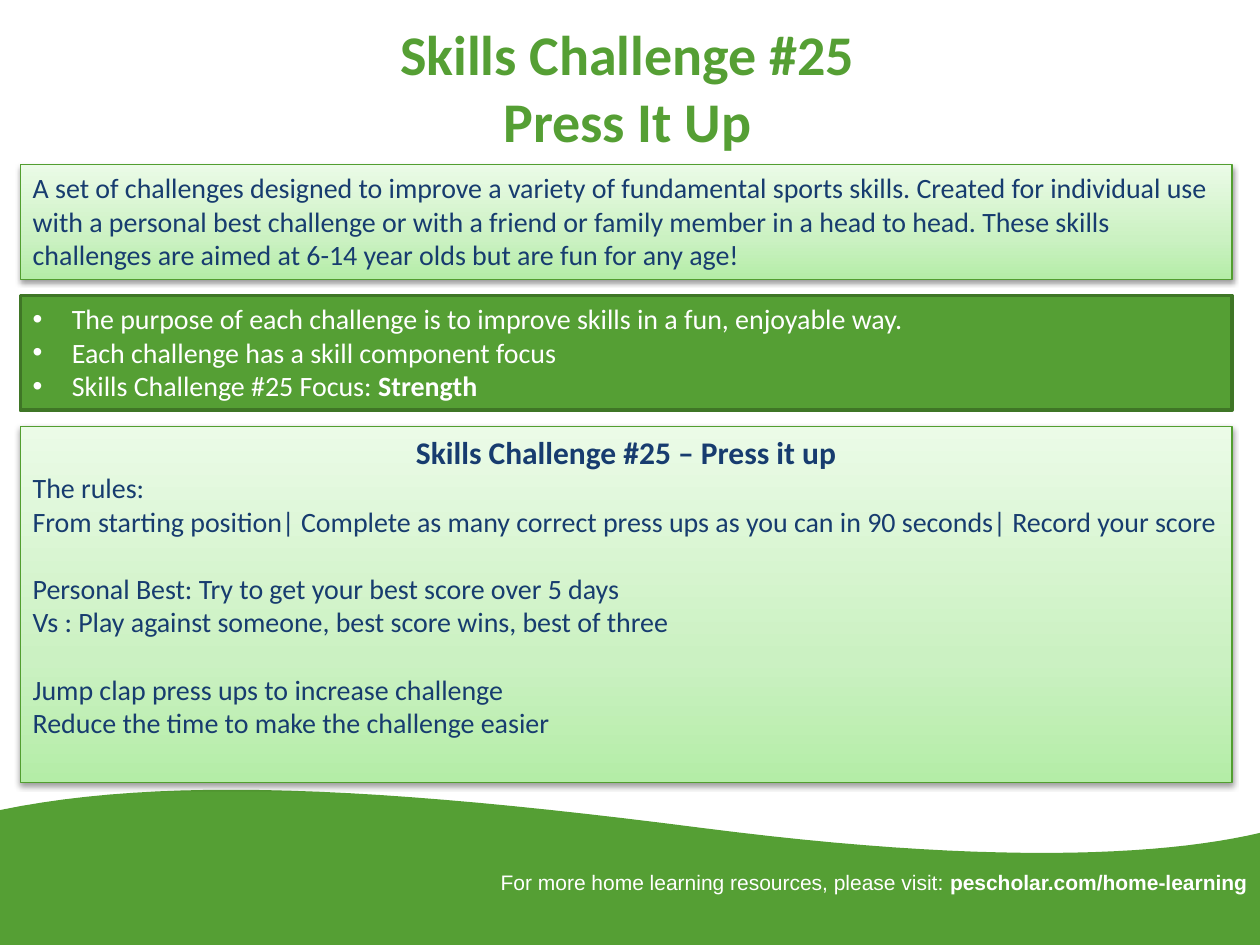
import copy

import lxml.etree
import pptx
import pptx.dml.color
import pptx.enum.shapes
import pptx.enum.text
import pptx.oxml.ns
import pptx.util

Cm = pptx.util.Cm
Pt = pptx.util.Pt
qn = pptx.oxml.ns.qn
Align = pptx.enum.text.PP_ALIGN
Anchor = pptx.enum.text.MSO_ANCHOR

WIDTH, HEIGHT = 25.4, 19.05
GREEN, NAVY, WHITE = "559F34", "173C6F", "FFFFFF"
SHADES = [(0, "B4EDA7"), (0.35, "CBF1C2"), (1, "EBFBE7")]
CURVES = [
    [(0, 16.33), (3.3, 15.65), (7.62, 15.85), (14.15, 16.69)],
    [(14.15, 16.69), (19.8, 17.42), (23.37, 17.27), (25.4, 16.79)],
]


def paint(text):
    """Return the colour for a hex string."""
    return pptx.dml.color.RGBColor.from_string(text)


def style(run, size, color, bold=False, face="Calibri"):
    """Set the font of one run."""
    font = run.font
    font.name, font.size, font.bold = face, Pt(size), bold
    font.color.rgb = paint(color)


def curve(ends, steps=24):
    """Return points along a cubic curve, in EMU."""
    points = []
    for step in range(steps + 1):
        t = step / steps
        parts = ((1 - t) ** 3, 3 * t * (1 - t) ** 2, 3 * t * t * (1 - t), t**3)
        points.append(tuple(
            Cm(sum(part * end[axis] for part, end in zip(parts, ends)))
            for axis in (0, 1)
        ))
    return points


def add_wave(slide):
    """Draw the green wave along the foot of the slide."""
    crest = curve(CURVES[0]) + curve(CURVES[1])[1:]
    pen = slide.shapes.build_freeform(*crest[0])
    pen.add_line_segments(crest[1:] + [(Cm(WIDTH), Cm(HEIGHT)), (0, Cm(HEIGHT))])
    wave = pen.convert_to_shape()
    wave.shadow.inherit = False
    wave.fill.solid()
    wave.fill.fore_color.rgb = paint(GREEN)
    wave.line.fill.background()


def add_text(slide, box, lines, align):
    """Add a wrapped text box and return its frame."""
    frame = slide.shapes.add_textbox(*map(Cm, box)).text_frame
    frame.word_wrap = True
    frame.text = lines
    frame.paragraphs[0].alignment = align
    return frame


def add_title(slide, box):
    """Place the two-line title."""
    frame = add_text(slide, box, "Skills Challenge #25\vPress It Up", Align.CENTER)
    frame.vertical_anchor = Anchor.MIDDLE
    style(frame.paragraphs[0].runs[0], 32, GREEN, True)
    for run in frame.paragraphs[0].runs[1:]:
        style(run, 32, GREEN, True)


def add_panel(slide, box, lines, color, edge, weight):
    """Add an outlined panel of left-aligned text."""
    panel = slide.shapes.add_shape(
        pptx.enum.shapes.MSO_SHAPE.RECTANGLE, *map(Cm, box))
    panel.shadow.inherit = False
    panel.line.color.rgb = paint(edge)
    panel.line.width = Pt(weight)
    frame = panel.text_frame
    frame.word_wrap = True
    frame.vertical_anchor = Anchor.TOP
    frame.text = "\n".join(lines)
    for para in frame.paragraphs:
        para.alignment = Align.LEFT
        for run in para.runs:
            style(run, 16, color)
    return panel


def add_pale(slide, box, lines):
    """Add a panel with a pale green blend and a soft shadow."""
    panel = add_panel(slide, box, lines, NAVY, "529E30", 0.75)
    panel.fill.gradient()
    panel.fill.gradient_angle = 90
    props = panel._element.spPr
    stops = props.find(".//" + qn("a:gsLst"))
    stops.insert(1, copy.deepcopy(stops[0]))
    for stop, (place, color) in zip(panel.fill.gradient_stops, SHADES):
        stop.position = place
        stop.color.rgb = paint(color)
    shade = lxml.etree.SubElement(
        props.find(qn("a:effectLst")), qn("a:outerShdw"),
        blurRad=str(Pt(3.1)), dist=str(Pt(1.6)), dir="5400000", rotWithShape="0")
    black = lxml.etree.SubElement(shade, qn("a:srgbClr"), val="000000")
    lxml.etree.SubElement(black, qn("a:alpha"), val="38000")
    return panel


def add_aims(slide, box):
    """Add the solid green panel of bulleted aims."""
    panel = add_panel(slide, box, [
        "The purpose of each challenge is to improve skills in a fun, enjoyable way.",
        "Each challenge has a skill component focus",
        "Skills Challenge #25 Focus: ",
    ], WHITE, "3F7626", 2)
    panel.fill.solid()
    panel.fill.fore_color.rgb = paint(GREEN)
    paras = panel.text_frame.paragraphs
    for para in paras:
        props = para._p.get_or_add_pPr()
        props.set("marL", str(Cm(0.79)))
        props.set("indent", str(-Cm(0.79)))
        lxml.etree.SubElement(props, qn("a:buFont"), typeface="Arial")
        lxml.etree.SubElement(props, qn("a:buChar"), char="•")
    focus = paras[-1].add_run()
    focus.text = "Strength"
    style(focus, 16, WHITE, True)


def add_rules(slide, box):
    """Add the panel with the rules of the challenge."""
    panel = add_pale(slide, box, [
        "Skills Challenge #25 – Press it up",
        "The rules:",
        "From starting position| Complete as many correct press ups as you can"
        " in 90 seconds| Record your score",
        "Personal Best: Try to get your best score over 5 days",
        "Vs : Play against someone, best score wins, best of three",
        "Jump clap press ups to increase challenge",
        "Reduce the time to make the challenge easier",
    ])
    paras = panel.text_frame.paragraphs
    paras[0].alignment = Align.CENTER
    style(paras[0].runs[0], 18, NAVY, True)
    for index in (3, 5):
        paras[index].space_before = Pt(19.2)


def add_foot(slide, box):
    """Place the web address on the wave."""
    frame = add_text(
        slide, box, "For more home learning resources, please visit: ", Align.RIGHT)
    para = frame.paragraphs[0]
    para.add_run().text = "pescholar.com/home-learning"
    for run, bold in zip(para.runs, (False, True)):
        style(run, 12, WHITE, bold, "Arial")


def main():
    """Build and save the slide."""
    deck = pptx.Presentation()
    deck.slide_width, deck.slide_height = Cm(WIDTH), Cm(HEIGHT)
    slide = deck.slides.add_slide(deck.slide_layouts[6])
    left, wide = 0.41, 24.43
    add_wave(slide)
    add_title(slide, (1.22, 0.15, 22.86, 3.18))
    add_pale(slide, (left, 3.32, wide, 2.31), [
        "A set of challenges designed to improve a variety of fundamental sports"
        " skills. Created for individual use with a personal best challenge or"
        " with a friend or family member in a head to head. These skills"
        " challenges are aimed at 6-14 year olds but are fun for any age!",
    ])
    add_aims(slide, (left, 5.96, wide, 2.31))
    add_rules(slide, (left, 8.6, wide, 7.18))
    add_foot(slide, (8.61, 17.4, 16.79, 0.76))
    deck.save("out.pptx")


if __name__ == "__main__":
    main()
